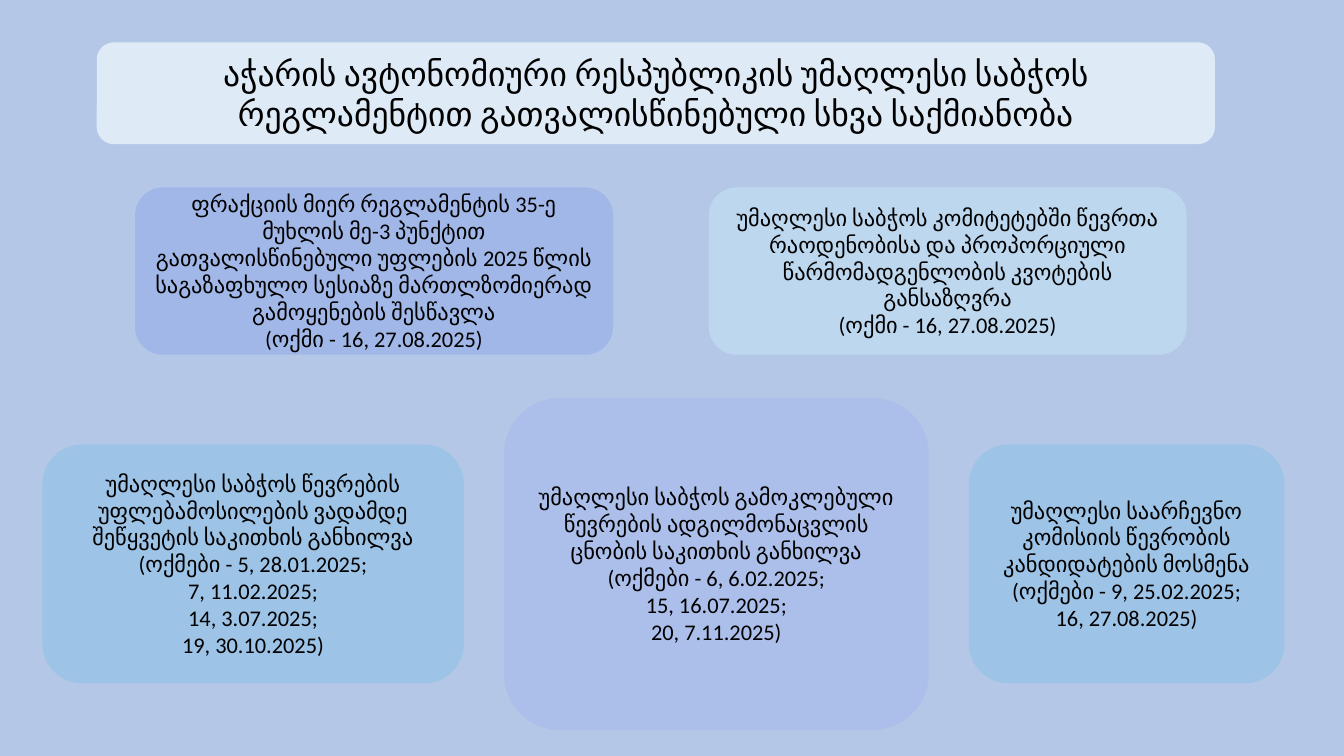
from pptx import Presentation
from pptx.dml.color import RGBColor
from pptx.enum.shapes import MSO_SHAPE as SHAPE
from pptx.enum.text import MSO_ANCHOR as ANCHOR, PP_ALIGN as ALIGN
from pptx.util import Inches, Pt

TITLE = "აჭარის ავტონომიური რესპუბლიკის უმაღლესი საბჭოს რეგლამენტით გათვალისწინებული სხვა საქმიანობა"

# Top row: left edge, fill, paragraphs
DECISIONS = [
    (1.34, "A1B7E7", [
        "ფრაქციის მიერ რეგლამენტის 35-ე მუხლის მე-3 პუნქტით გათვალისწინებული უფლების "
        "2025 წლის საგაზაფხულო სესიაზე მართლზომიერად გამოყენების შესწავლა",
        "(ოქმი - 16, 27.08.2025)"]),
    (7.03, "BDD7EE", [
        "უმაღლესი საბჭოს კომიტეტებში წევრთა რაოდენობისა და პროპორციული "
        "წარმომადგენლობის კვოტების განსაზღვრა",
        "(ოქმი - 16, 27.08.2025)"]),
]

# Bottom row: left edge, width, height, fill, paragraphs
MEMBERSHIP = [
    (0.42, 4.18, 2.37, "9DC3E6", [
        "უმაღლესი საბჭოს წევრების უფლებამოსილების ვადამდე შეწყვეტის საკითხის განხილვა",
        "(ოქმები - 5, 28.01.2025;", "7, 11.02.2025;", "14, 3.07.2025;", "19, 30.10.2025)"]),
    (5, 4.21, 3.29, "ACBFEA", [
        "უმაღლესი საბჭოს გამოკლებული წევრების ადგილმონაცვლის ცნობის საკითხის განხილვა",
        "(ოქმები - 6, 6.02.2025;", "15, 16.07.2025;", "20, 7.11.2025)"]),
    (9.61, 3.13, 2.37, "9DC3E6", [
        "უმაღლესი საარჩევნო კომისიის წევრობის კანდიდატების მოსმენა",
        "(ოქმები - 9, 25.02.2025;", "16, 27.08.2025)"]),
]
MEMBERSHIP_MIDDLE = 5.595


def paint(fill, color):
    fill.solid()
    fill.fore_color.rgb = RGBColor.from_string(color)


def add_card(slide, left, top, width, height, color, paragraphs, size=16):
    sp = slide.shapes.add_shape(SHAPE.ROUNDED_RECTANGLE, Inches(left), Inches(top),
                                Inches(width), Inches(height))
    sp.shadow.inherit = False
    paint(sp.fill, color)
    sp.line.fill.background()
    tf = sp.text_frame
    tf.word_wrap = True
    tf.vertical_anchor = ANCHOR.MIDDLE
    for i, text in enumerate(paragraphs):
        p = tf.add_paragraph() if i else tf.paragraphs[0]
        p.alignment = ALIGN.CENTER
        r = p.add_run()
        r.text = text
        r.font.name = "Calibri"
        r.font.size = Pt(size)
        paint(r.font.fill, "000000")


def main():
    prs = Presentation()
    prs.slide_width, prs.slide_height = Inches(13.33), Inches(7.5)
    slide = prs.slides.add_slide(prs.slide_layouts[6])
    paint(slide.background.fill, "B4C7E7")

    # Heading
    add_card(slide, 0.96, 0.42, 11.09, 1.01, "DEEBF7", [TITLE], size=24)

    # Top row
    for left, color, paragraphs in DECISIONS:
        add_card(slide, left, 1.86, 4.74, 1.66, color, paragraphs)

    # Bottom row, centred on one horizontal axis
    for left, width, height, color, paragraphs in MEMBERSHIP:
        add_card(slide, left, MEMBERSHIP_MIDDLE - height / 2, width, height, color, paragraphs)

    prs.save("out.pptx")


if __name__ == "__main__":
    main()
